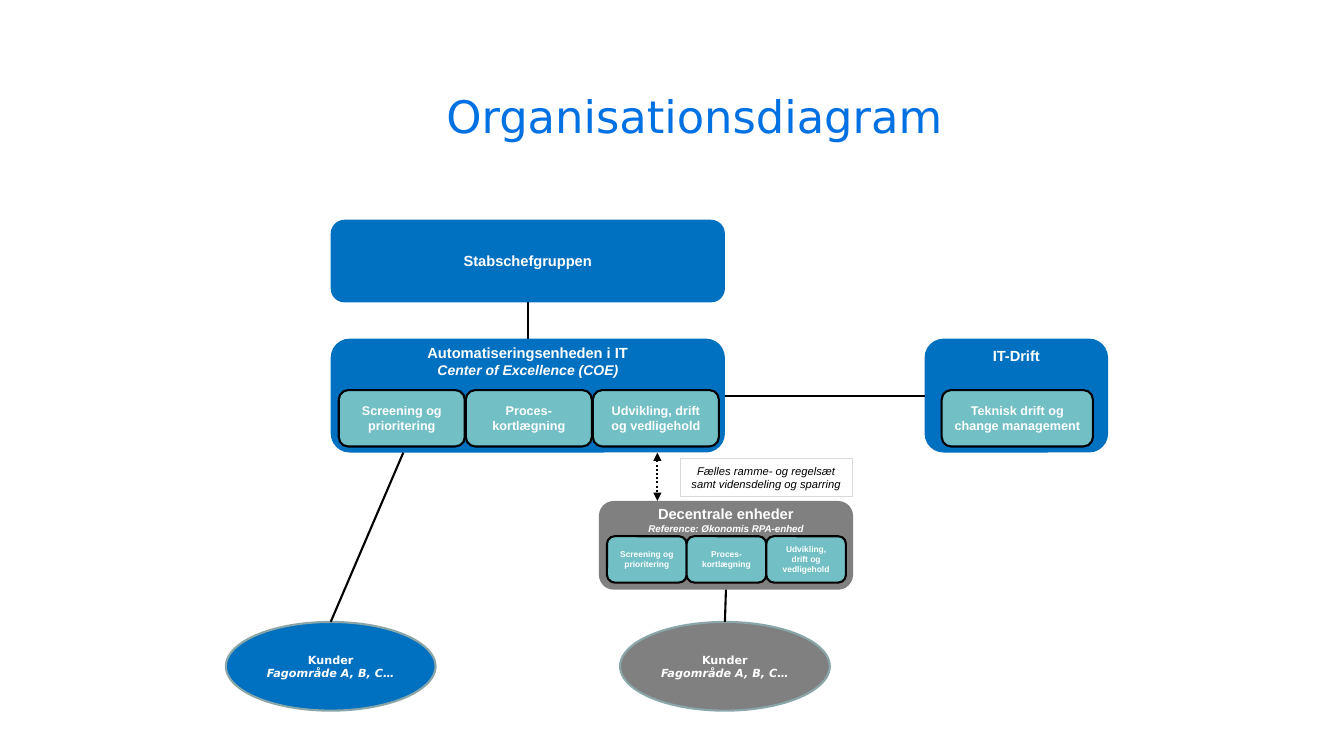
from lxml import etree
from pptx import Presentation
from pptx.dml.color import RGBColor
from pptx.enum.dml import MSO_LINE
from pptx.enum.shapes import MSO_CONNECTOR, MSO_SHAPE
from pptx.enum.text import MSO_ANCHOR, PP_ALIGN
from pptx.oxml.ns import qn
from pptx.util import Inches, Pt

ROUNDED, OVAL, RECTANGLE = MSO_SHAPE.ROUNDED_RECTANGLE, MSO_SHAPE.OVAL, MSO_SHAPE.RECTANGLE
STRAIGHT = MSO_CONNECTOR.STRAIGHT
DOTTED = MSO_LINE.ROUND_DOT
TOP, MIDDLE = MSO_ANCHOR.TOP, MSO_ANCHOR.MIDDLE
CENTER = PP_ALIGN.CENTER
SITE_TOP, SITE_LEFT, SITE_BOTTOM, SITE_RIGHT = range(4)

COLORS = {
    "title": "0071E2", "blue": "0070C0", "gray": "808080", "teal": "72BFC5",
    "black": "000000", "white": "FFFFFF", "oval": "8AA6A8", "note": "D9D9D9",
}
SANS, DEJAVU = "Arial", "DejaVu Sans"

# Content
TITLE = "Organisationsdiagram"
TASKS = ["Screening og prioritering", "Proces-kortlægning", "Udvikling, drift og vedligehold"]
NOTE = "Fælles ramme- og regelsæt samt vidensdeling og sparring"
CUSTOMERS = [("Kunder", 8, False), ("Fagområde A, B, C…", 8, True)]

# Units: name -> (left, top, width, height), fill, anchor, top inset, lines (text, size, italic)
UNITS = {
    "staff": ((3.28, 2.18, 3.91, 0.82), "blue", MIDDLE, 0.05,
              [("Stabschefgruppen", 10.5, False)]),
    "centre": ((3.28, 3.36, 3.91, 1.13), "blue", TOP, 0,
               [("Automatiseringsenheden i IT", 10.5, False),
                ("Center of Excellence (COE)", 10, True)]),
    "operations": ((9.17, 3.36, 1.82, 1.13), "blue", TOP, 0.03,
                   [("IT-Drift", 10.5, False)]),
    "local": ((5.94, 4.97, 2.52, 0.88), "gray", TOP, 0,
              [("Decentrale enheder", 10.5, False),
               ("Reference: Økonomis RPA-enhed", 7, True)]),
}
# Task rows: first left, top, width, height, step, text size, texts
TASK_ROWS = [
    (3.36, 3.87, 1.25, 0.56, 1.26, 9, TASKS),
    (9.34, 3.87, 1.5, 0.56, 0, 9, ["Teknisk drift og change management"]),
    (6.02, 5.32, 0.79, 0.46, 0.79, 6, TASKS),
]
OVALS = {"centre": (2.24, "blue"), "local": (6.15, "gray")}


def color(name):
    return RGBColor.from_string(COLORS[name])


def add_box(slide, kind, place, lines, fill=None, line=None, line_width=1.5, font=SANS,
            ink="white", bold=True, anchor=MIDDLE, side=0.09, upper=0.05):
    box = slide.shapes.add_shape(kind, *map(Inches, place))
    box.shadow.inherit = False
    if fill:
        box.fill.solid()
        box.fill.fore_color.rgb = color(fill)
    else:
        box.fill.background()
    if line:
        box.line.color.rgb = color(line)
        box.line.width = Pt(line_width)
    else:
        box.line.fill.background()
    frame = box.text_frame
    frame.word_wrap = True
    frame.vertical_anchor = anchor
    frame.margin_left = frame.margin_right = Inches(side)
    frame.margin_top, frame.margin_bottom = Inches(upper), Inches(0.05)
    frame.text = "\n".join(text for text, _, _ in lines)
    for para, (_, size, italic) in zip(frame.paragraphs, lines):
        para.alignment = CENTER
        for span in para.runs:
            span.font.name, span.font.size = font, Pt(size)
            span.font.bold, span.font.italic = bold, italic
            span.font.color.rgb = color(ink)
    return box


def add_line(slide, start, end, begin=None, finish=None):
    link = slide.shapes.add_connector(STRAIGHT, *map(Inches, start + end))
    link.line.color.rgb = color("black")
    link.line.width = Pt(1.5)
    etree.SubElement(link._element.spPr, qn("a:effectLst"))
    if begin:
        link.begin_connect(*begin)
    if finish:
        link.end_connect(*finish)
    return link


def main():
    deck = Presentation()
    deck.slide_width, deck.slide_height = Inches(13.33), Inches(7.5)
    slide = deck.slides.add_slide(deck.slide_layouts[5])

    # Title
    title = slide.shapes.title
    title.left, title.top, title.width, title.height = map(Inches, (0.89, 0.52, 12, 1.25))
    title.text_frame.text = TITLE
    title.text_frame.vertical_anchor = MIDDLE
    para = title.text_frame.paragraphs[0]
    para.alignment = CENTER
    font = para.runs[0].font
    font.name, font.size, font.color.rgb = DEJAVU, Pt(32), color("title")

    # Units and customers
    units = {name: add_box(slide, ROUNDED, place, lines, fill, anchor=anchor, upper=upper)
             for name, (place, fill, anchor, upper, lines) in UNITS.items()}
    ovals = {name: add_box(slide, OVAL, (left, 6.17, 2.08, 0.88), CUSTOMERS, fill, "oval",
                           font=DEJAVU, side=0.05)
             for name, (left, fill) in OVALS.items()}

    # Tasks inside the units
    for left, top, width, height, step, size, texts in TASK_ROWS:
        for index, text in enumerate(texts):
            add_box(slide, ROUNDED, (left + index * step, top, width, height),
                    [(text, size, False)], "teal", "black")

    # Lines between units and customers
    add_line(slide, (5.23, 3), (5.23, 3.36),
             (units["staff"], SITE_BOTTOM), (units["centre"], SITE_TOP))
    add_line(slide, (7.19, 3.93), (9.17, 3.93),
             (units["centre"], SITE_RIGHT), (units["operations"], SITE_LEFT))
    add_line(slide, (7.19, 5.85), (7.19, 6.17),
             (units["local"], SITE_BOTTOM), (ovals["local"], SITE_TOP))
    add_line(slide, (4, 4.49), (3.28, 6.17), finish=(ovals["centre"], SITE_TOP))

    # Dotted two-way arrow with its note
    arrow = add_line(slide, (6.52, 4.49), (6.52, 4.97))
    arrow.line.dash_style = DOTTED
    for tag in ("a:headEnd", "a:tailEnd"):
        etree.SubElement(arrow.line._get_or_add_ln(), qn(tag), type="triangle")
    add_box(slide, RECTANGLE, (6.75, 4.55, 1.7, 0.37), [(NOTE, 8, True)], line="note",
            line_width=0.25, ink="black", bold=False, side=0.08)

    deck.save("out.pptx")


if __name__ == "__main__":
    main()
